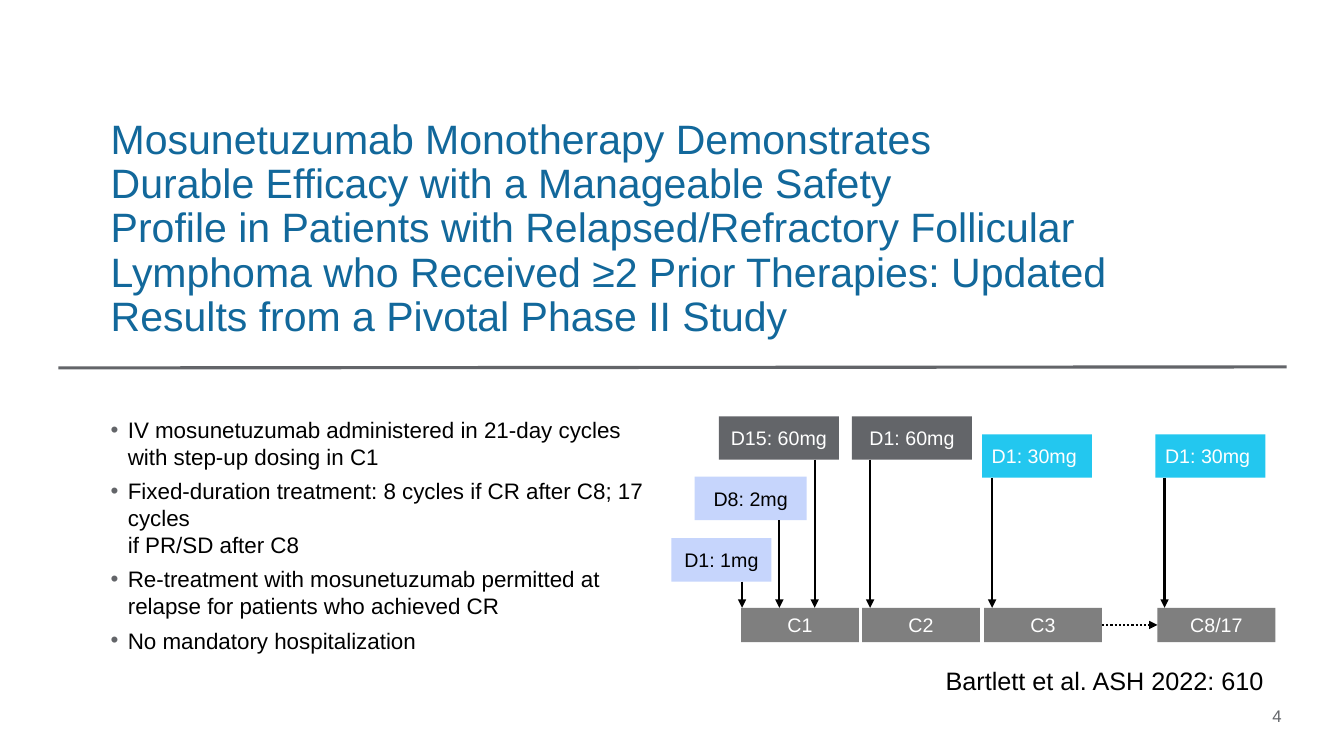
from collections import namedtuple

from lxml import etree
from pptx import Presentation
from pptx.dml.color import RGBColor
from pptx.enum.dml import MSO_LINE
from pptx.enum.shapes import MSO_CONNECTOR, MSO_SHAPE
from pptx.enum.text import MSO_ANCHOR, MSO_AUTO_SIZE, PP_ALIGN
from pptx.oxml.ns import qn
from pptx.util import Pt

EMU_PER_PX = 9144
FONT = "Arial"
BLACK = RGBColor(0x00, 0x00, 0x00)
WHITE = RGBColor(0xFF, 0xFF, 0xFF)
BLUE = RGBColor(0x12, 0x68, 0x9B)
SLATE = RGBColor(0x63, 0x65, 0x69)
GREY = RGBColor(0x7F, 0x7F, 0x7F)
CYAN = RGBColor(0x23, 0xC7, 0xEF)
LAVENDER = RGBColor(0xC6, 0xD5, 0xFC)

STRAIGHT = MSO_CONNECTOR.STRAIGHT
RECTANGLE = MSO_SHAPE.RECTANGLE
DOTTED = MSO_LINE.ROUND_DOT
MIDDLE = MSO_ANCHOR.MIDDLE
NO_FIT = MSO_AUTO_SIZE.NONE
CENTER = PP_ALIGN.CENTER
RIGHT = PP_ALIGN.RIGHT
LEFT_SIDE, RIGHT_SIDE = 1, 3

Box = namedtuple("Box", "left top width height")
Dose = namedtuple("Dose", "label left top width fill ink arrow")

TITLE_LINES = [
    "Mosunetuzumab Monotherapy Demonstrates ",
    "Durable Efficacy with a Manageable Safety ",
    "Profile in Patients with Relapsed/Refractory Follicular Lymphoma "
    "who Received ≥2 Prior Therapies: Updated Results from a Pivotal "
    "Phase II Study",
]
REGIMEN_POINTS = [
    ["IV mosunetuzumab administered in 21-day cycles ",
     "with step-up dosing in C1"],
    ["Fixed-duration treatment: 8 cycles if CR after C8; 17 cycles ",
     "if PR/SD after C8"],
    ["Re-treatment with mosunetuzumab permitted at relapse for patients "
     "who achieved CR"],
    ["No mandatory hospitalization"],
]
DOSES = [
    Dose("D1: 1mg", 0, 121, 99, LAVENDER, BLACK, 70),
    Dose("D8: 2mg", 23, 60, 111, LAVENDER, BLACK, 107),
    Dose("D15: 60mg", 47, 0, 119, SLATE, WHITE, 142),
    Dose("D1: 60mg", 179, 0, 119, SLATE, WHITE, 197),
    Dose("D1: 30mg ", 308, 18, 109, CYAN, WHITE, 318),
    Dose("D1: 30mg ", 480, 18, 109, CYAN, WHITE, 489),
]
CYCLES = [("C1", 69), ("C2", 189), ("C3", 310), ("C8/17", 482)]
DOSE_HEIGHT = 43
CYCLE_WIDTH, CYCLE_HEIGHT = 117, 34


def px(length):
    return length * EMU_PER_PX


def write_lines(para, lines, size, color):
    for index, line in enumerate(lines):
        if index:
            para.add_line_break()
        span = para.add_run()
        span.text = line
        span.font.name = FONT
        span.font.size = Pt(size)
        span.font.color.rgb = color


def add_text_frame(page, box, inset=5, wrap=True):
    frame = page.shapes.add_textbox(*map(px, box)).text_frame
    frame.word_wrap = wrap
    frame.auto_size = NO_FIT
    frame.margin_top = frame.margin_bottom = px(inset)
    return frame


def add_line(page, start, end, color, width, arrow=False):
    line = page.shapes.add_connector(STRAIGHT, *map(px, start + end))
    line.line.color.rgb = color
    line.line.width = Pt(width)
    properties = line._element.spPr
    if arrow:
        outline = properties.find(qn("a:ln"))
        etree.SubElement(outline, qn("a:tailEnd"), type="triangle")
    etree.SubElement(properties, qn("a:effectLst"))
    return line


def add_label(page, box, label, fill, ink):
    block = page.shapes.add_shape(RECTANGLE, *map(px, box))
    block.shadow.inherit = False
    block.fill.solid()
    block.fill.fore_color.rgb = fill
    block.line.fill.background()
    frame = block.text_frame
    frame.vertical_anchor = MIDDLE
    frame.margin_left = frame.margin_right = 0
    para = frame.paragraphs[0]
    para.alignment = CENTER
    write_lines(para, [label], 14, ink)
    return block


def add_title(page, box):
    para = add_text_frame(page, box).paragraphs[0]
    para.line_spacing = 0.9
    write_lines(para, TITLE_LINES, 29.3, BLUE)


def add_bullet(para):
    properties = para._p.get_or_add_pPr()
    properties.set("marL", str(px(17)))
    properties.set("indent", str(px(-17)))
    color = etree.SubElement(properties, qn("a:buClr"))
    etree.SubElement(color, qn("a:srgbClr"), val=str(SLATE))
    etree.SubElement(properties, qn("a:buFont"), typeface=FONT)
    etree.SubElement(properties, qn("a:buChar"), char="•")


def add_regimen(page, box):
    frame = add_text_frame(page, box, inset=0)
    for index, lines in enumerate(REGIMEN_POINTS):
        para = frame.add_paragraph() if index else frame.paragraphs[0]
        para.space_after = Pt(5.3)
        add_bullet(para)
        write_lines(para, lines, 16, BLACK)


def add_schedule(page, box):
    cycle_top = box.top + box.height - CYCLE_HEIGHT
    cycles = [
        add_label(page, Box(box.left + left, cycle_top, CYCLE_WIDTH, CYCLE_HEIGHT),
                  label, GREY, WHITE)
        for label, left in CYCLES
    ]
    for dose in DOSES:
        place = Box(box.left + dose.left, box.top + dose.top, dose.width, DOSE_HEIGHT)
        add_label(page, place, dose.label, dose.fill, dose.ink)
        arrow_x = box.left + dose.arrow
        add_line(page, (arrow_x, place.top + DOSE_HEIGHT), (arrow_x, cycle_top),
                 BLACK, 1.5, arrow=True)
    middle = cycle_top + CYCLE_HEIGHT // 2
    skipped = add_line(page, (box.left + CYCLES[2][1] + CYCLE_WIDTH, middle),
                       (box.left + CYCLES[3][1], middle), BLACK, 1.5, arrow=True)
    skipped.line.dash_style = DOTTED
    skipped.begin_connect(cycles[2], RIGHT_SIDE)
    skipped.end_connect(cycles[3], LEFT_SIDE)


def add_citation(page, box):
    para = add_text_frame(page, box, wrap=False).paragraphs[0]
    write_lines(para, ["Bartlett et al. ASH 2022: 610"], 18, BLACK)


def add_page_number(page, box):
    para = add_text_frame(page, box).paragraphs[0]
    para.alignment = RIGHT
    write_lines(para, ["4"], 12, SLATE)


def main():
    deck = Presentation()
    deck.slide_width = px(1333)
    deck.slide_height = px(750)
    page = deck.slides.add_slide(deck.slide_layouts[6])
    add_page_number(page, Box(1006, 695, 275, 30))
    add_line(page, (58, 365), (1276, 364), SLATE, 2.25)
    add_title(page, Box(100, 113, 1133, 142))
    add_regimen(page, Box(100, 413, 566, 199))
    add_schedule(page, Box(666, 413, 599, 224))
    add_citation(page, Box(928, 655, 339, 40))
    deck.save("out.pptx")


if __name__ == "__main__":
    main()
